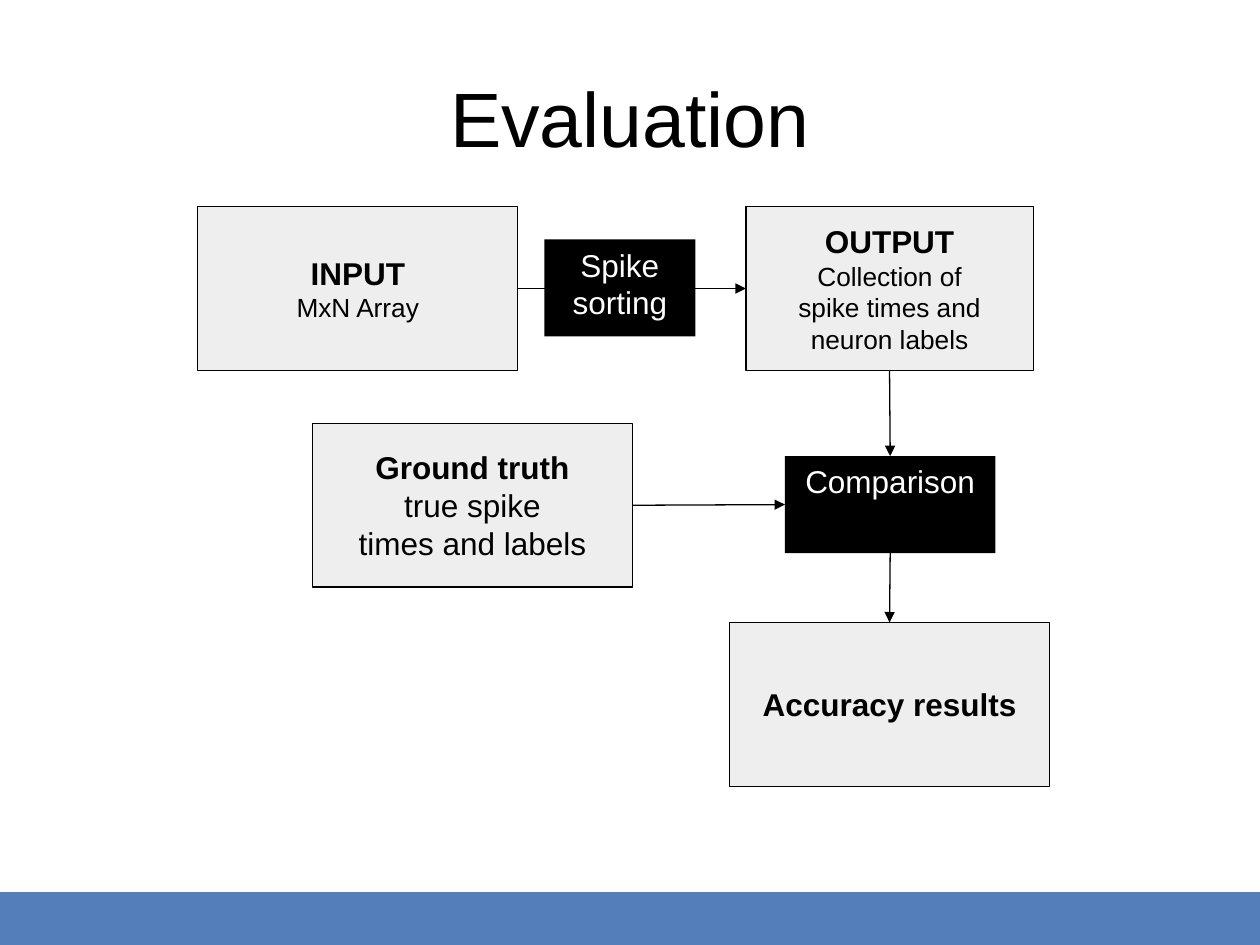
from copy import deepcopy

from lxml import etree
from pptx import Presentation
from pptx.dml.color import RGBColor
from pptx.enum.shapes import MSO_CONNECTOR, MSO_SHAPE
from pptx.enum.text import MSO_ANCHOR, PP_ALIGN
from pptx.oxml.ns import qn
from pptx.util import Inches, Pt


def color(hex_string):
    return RGBColor.from_string(hex_string)


def add_box(slide, position, fill, line=None, text_color="000000", anchor=MSO_ANCHOR.MIDDLE, lines=()):
    """Add a rectangle; each line is (text, size, bold)."""
    shape = slide.shapes.add_shape(MSO_SHAPE.RECTANGLE, *(Inches(value) for value in position))
    shape.shadow.inherit = False
    shape.fill.solid()
    shape.fill.fore_color.rgb = color(fill)
    if line:
        shape.line.color.rgb = color(line)
        shape.line.width = Pt(0.75)
    else:
        shape.line.fill.background()
    text_frame = shape.text_frame
    text_frame.word_wrap = True
    text_frame.vertical_anchor = anchor
    for index, (text, size, bold) in enumerate(lines):
        paragraph = text_frame.add_paragraph() if index else text_frame.paragraphs[0]
        paragraph.text = text
        paragraph.alignment = PP_ALIGN.CENTER
        for run in paragraph.runs:
            run.font.name = "Arial"
            run.font.size = Pt(size)
            run.font.bold = bold
            run.font.color.rgb = color(text_color)
        # Line breaks take the text size of the runs
        for line_break in paragraph._p.findall(qn("a:br")):
            line_break.append(deepcopy(paragraph.runs[0]._r.rPr))
    return shape


presentation = Presentation()
presentation.slide_width = Inches(10)
presentation.slide_height = Inches(7.5)
slide = presentation.slides.add_slide(presentation.slide_layouts[5])

# Footer bar
add_box(slide, (0, 7.08, 10, 0.42), "537EBA")

# Title
title = slide.shapes.title
title.left, title.top, title.width, title.height = Inches(0.5), Inches(0.3), Inches(9), Inches(1.25)
title_frame = title.text_frame
title_frame.text = "Evaluation"
title_frame.vertical_anchor = MSO_ANCHOR.MIDDLE
title_frame.margin_left = title_frame.margin_right = 0
title_frame.margin_top = title_frame.margin_bottom = 0
title_frame.paragraphs[0].alignment = PP_ALIGN.CENTER
title_font = title_frame.paragraphs[0].runs[0].font
title_font.name = "Arial"
title_font.size = Pt(44)
title_font.color.rgb = color("000000")

# Data boxes
data_style = {"fill": "EEEEEE", "line": "000000"}
input_box = add_box(slide, (1.57, 1.64, 2.54, 1.3), **data_style,
                    lines=[("INPUT", 18, True), ("MxN Array", 15, False)])
output_box = add_box(slide, (5.92, 1.64, 2.28, 1.3), **data_style,
                     lines=[("OUTPUT", 18, True),
                            ("Collection of\nspike times and\nneuron labels", 15, False)])
truth_box = add_box(slide, (2.48, 3.36, 2.54, 1.3), **data_style,
                    lines=[("Ground truth", 18, True), ("true spike\ntimes and labels", 18, False)])
results_box = add_box(slide, (5.79, 4.94, 2.54, 1.3), **data_style,
                      lines=[("Accuracy results", 18, True)])

# Comparison step
step_style = {"fill": "000000", "text_color": "FFFFFF", "anchor": MSO_ANCHOR.TOP}
comparison_box = add_box(slide, (6.23, 3.62, 1.67, 0.77), **step_style,
                         lines=[("Comparison", 18, False)])

# Arrows: start box and side, end box and side
TOP, LEFT, BOTTOM, RIGHT = range(4)
for start_box, start_side, end_box, end_side in [
    (input_box, RIGHT, output_box, LEFT),
    (truth_box, RIGHT, comparison_box, LEFT),
    (output_box, BOTTOM, comparison_box, TOP),
    (comparison_box, BOTTOM, results_box, TOP),
]:
    connector = slide.shapes.add_connector(MSO_CONNECTOR.STRAIGHT, 0, 0, 0, 0)
    connector.begin_connect(start_box, start_side)
    connector.end_connect(end_box, end_side)
    connector.line.color.rgb = color("000000")
    connector.line.width = Pt(0.75)
    etree.SubElement(connector.line._get_or_add_ln(), qn("a:tailEnd"), type="triangle")
    etree.SubElement(connector._element.spPr, qn("a:effectLst"))

# Spike sorting step, lying over the arrow from input to output
add_box(slide, (4.32, 1.9, 1.2, 0.77), **step_style, lines=[("Spike sorting", 18, False)])

presentation.save("out.pptx")
